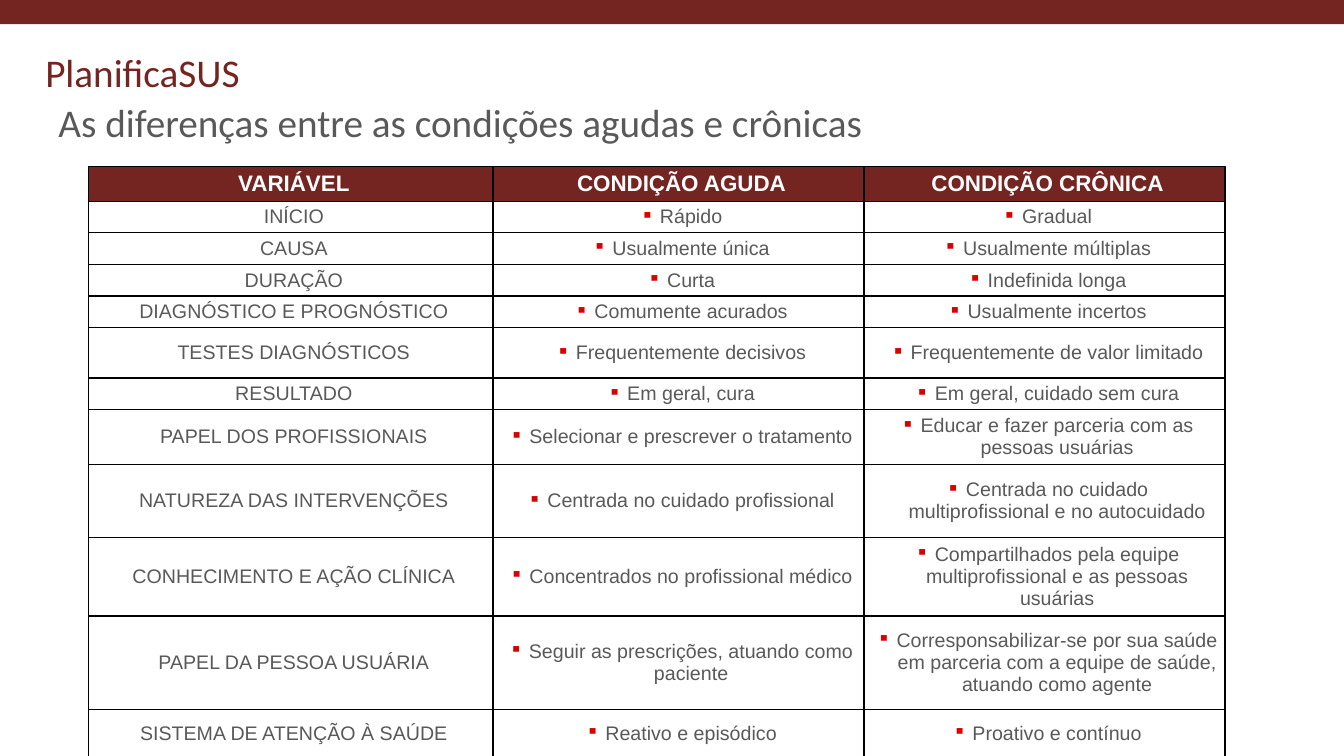
"""Build a slide comparing acute and chronic conditions in a bordered table."""
from dataclasses import dataclass

from lxml import etree
from pptx import Presentation
from pptx.dml.color import RGBColor
from pptx.enum.shapes import MSO_SHAPE
from pptx.enum.text import MSO_ANCHOR, MSO_AUTO_SIZE, PP_ALIGN
from pptx.oxml.ns import qn
from pptx.util import Inches, Pt

RECTANGLE = MSO_SHAPE.RECTANGLE
MIDDLE = MSO_ANCHOR.MIDDLE
LEFT, CENTER = PP_ALIGN.LEFT, PP_ALIGN.CENTER
NO_FIT, GROW = MSO_AUTO_SIZE.NONE, MSO_AUTO_SIZE.SHAPE_TO_FIT_TEXT

WIDTH, HEIGHT = Inches(13.33), Inches(7.5)
COLORS = {"wine": "742521", "gray": "595959", "white": "FFFFFF",
          "red": "DA0000", "black": "000000"}


def across(percent: float) -> int:
    """Return a percentage of the slide width."""
    return round(WIDTH * percent / 100)


def down(percent: float) -> int:
    """Return a percentage of the slide height."""
    return round(HEIGHT * percent / 100)


@dataclass(frozen=True)
class Area:
    """Hold a place as percentages of the slide."""
    left: float
    top: float
    width: float
    height: float

    def box(self) -> dict[str, int]:
        """Return the place as shape attributes."""
        return {"left": across(self.left), "top": down(self.top),
                "width": across(self.width), "height": down(self.height)}


@dataclass(frozen=True)
class Row:
    """Hold one table row and its height as a percentage of the slide."""
    height: float
    variable: str
    acute: str
    chronic: str


@dataclass(frozen=True)
class CellStyle:
    """Hold the look of a table cell."""
    font: dict
    indent: float = 0
    bullet: str = ""
    fill: str = ""


BAR = Area(0, 0, 100, 3.2)
LABEL = Area(2.63, 5.73, 16.13, 7.6)
TITLE = Area(3.6, 6.8, 82.45, 19.33)
COLUMNS = (30.08, 27.61, 26.86)
ROWS = (
    Row(4.4, "VARIÁVEL", "CONDIÇÃO AGUDA", "CONDIÇÃO CRÔNICA"),
    Row(4, "INÍCIO", "Rápido", "Gradual"),
    Row(4, "CAUSA", "Usualmente única", "Usualmente múltiplas"),
    Row(4, "DURAÇÃO", "Curta", "Indefinida longa"),
    Row(4, "DIAGNÓSTICO E PROGNÓSTICO", "Comumente acurados", "Usualmente incertos"),
    Row(6.67, "TESTES DIAGNÓSTICOS", "Frequentemente decisivos",
        "Frequentemente de valor limitado"),
    Row(4, "RESULTADO", "Em geral, cura", "Em geral, cuidado sem cura"),
    Row(6.93, "PAPEL DOS PROFISSIONAIS", "Selecionar e prescrever o tratamento",
        "Educar e fazer parceria com as pessoas usuárias"),
    Row(9.6, "NATUREZA DAS INTERVENÇÕES", "Centrada no cuidado profissional",
        "Centrada no cuidado multiprofissional e no autocuidado"),
    Row(9.87, "CONHECIMENTO E AÇÃO CLÍNICA", "Concentrados no profissional médico",
        "Compartilhados pela equipe multiprofissional e as pessoas usuárias"),
    Row(12.4, "PAPEL DA PESSOA USUÁRIA", "Seguir as prescrições, atuando como paciente",
        "Corresponsabilizar-se por sua saúde em parceria com a equipe de saúde, "
        "atuando como agente"),
    Row(6.27, "SISTEMA DE ATENÇÃO À SAÚDE", "Reativo e episódico", "Proativo e contínuo"),
)
TABLE = Area(6.6, 22, sum(COLUMNS), sum(row.height for row in ROWS))

HEADING = {"name": "Calibri", "size": Pt(28), "bold": False}
BODY = {"name": "Arial", "size": Pt(14), "bold": False, "color": "gray"}
HEADER_CELL = CellStyle({**BODY, "size": Pt(16), "bold": True, "color": "white"},
                        indent=2.85, fill="wine")
VARIABLE_CELL = CellStyle(BODY)
CONDITION_CELL = CellStyle(BODY, indent=1.43, bullet="▪")
CELL_FORMAT = {"vertical_anchor": MIDDLE, "margin_left": across(0.75),
               "margin_right": across(0.3), "margin_top": across(0.3),
               "margin_bottom": across(0.3)}


def apply(target, values: dict) -> None:
    """Set each named attribute on the target."""
    for name, value in values.items():
        setattr(target, name, value)


def color(name: str) -> RGBColor:
    """Return a palette colour."""
    return RGBColor.from_string(COLORS[name])


def write(para, text: str, font: dict) -> None:
    """Add a formatted span of text to a paragraph."""
    span = para.add_run()
    span.text = text
    apply(span.font, {key: value for key, value in font.items() if key != "color"})
    span.font.color.rgb = color(font["color"])


def add_color(parent, name: str) -> None:
    """Append a palette colour element."""
    etree.SubElement(parent, qn("a:srgbClr"), val=COLORS[name])


def add_indent(para, style: CellStyle) -> None:
    """Give a paragraph its hanging indent and bullet."""
    properties = para._p.get_or_add_pPr()
    properties.set("marL", str(across(style.indent)))
    properties.set("indent", str(-across(style.indent)))
    if style.bullet:
        add_color(etree.SubElement(properties, qn("a:buClr")), "red")
        etree.SubElement(properties, qn("a:buSzPct"), val="90000")
        etree.SubElement(properties, qn("a:buChar"), char=style.bullet)


def add_borders(cell) -> None:
    """Draw a thin line on every side of a cell."""
    properties = cell._tc.get_or_add_tcPr()
    for side in "LRTB":
        line = etree.SubElement(properties, qn(f"a:ln{side}"), w=str(Pt(1)))
        add_color(etree.SubElement(line, qn("a:solidFill")), "black")


def fill_cell(cell, text: str, style: CellStyle) -> None:
    """Write and format one table cell."""
    apply(cell, CELL_FORMAT)
    add_borders(cell)
    if style.fill:
        cell.fill.solid()
        cell.fill.fore_color.rgb = color(style.fill)
    else:
        cell.fill.background()
    para = cell.text_frame.paragraphs[0]
    para.alignment = CENTER
    add_indent(para, style)
    write(para, text, style.font)


def add_label(page) -> None:
    """Add the top bar and the programme name."""
    bar = page.shapes.add_shape(RECTANGLE, **BAR.box())
    bar.shadow.inherit = False
    bar.fill.solid()
    bar.fill.fore_color.rgb = color("wine")
    bar.line.fill.background()
    frame = page.shapes.add_textbox(**LABEL.box()).text_frame
    apply(frame, {"word_wrap": False, "auto_size": GROW})
    write(frame.paragraphs[0], "PlanificaSUS", {**HEADING, "color": "wine"})


def add_title(page) -> None:
    """Place and format the slide title."""
    title = page.shapes.title
    apply(title, TITLE.box())
    frame = title.text_frame
    apply(frame, {"word_wrap": True, "auto_size": NO_FIT, "vertical_anchor": MIDDLE})
    para = frame.paragraphs[0]
    apply(para, {"alignment": LEFT, "line_spacing": 0.9})
    write(para, "As diferenças entre as condições agudas e crônicas",
          {**HEADING, "color": "gray"})


def add_comparison(page) -> None:
    """Add the table of conditions."""
    table = page.shapes.add_table(len(ROWS), len(COLUMNS), **TABLE.box()).table
    apply(table, {"first_row": False, "horz_banding": False})
    for column, width in zip(table.columns, COLUMNS):
        column.width = across(width)
    for index, row in enumerate(ROWS):
        table.rows[index].height = down(row.height)
        styles = ((VARIABLE_CELL, CONDITION_CELL, CONDITION_CELL) if index
                  else (HEADER_CELL,) * 3)
        texts = (row.variable, row.acute, row.chronic)
        for cell, text, style in zip(table.rows[index].cells, texts, styles):
            fill_cell(cell, text, style)


def main() -> None:
    """Build and save the deck."""
    deck = Presentation()
    apply(deck, {"slide_width": WIDTH, "slide_height": HEIGHT})
    page = deck.slides.add_slide(deck.slide_layouts[5])
    add_label(page)
    add_title(page)
    add_comparison(page)
    deck.save("out.pptx")


if __name__ == "__main__":
    main()
